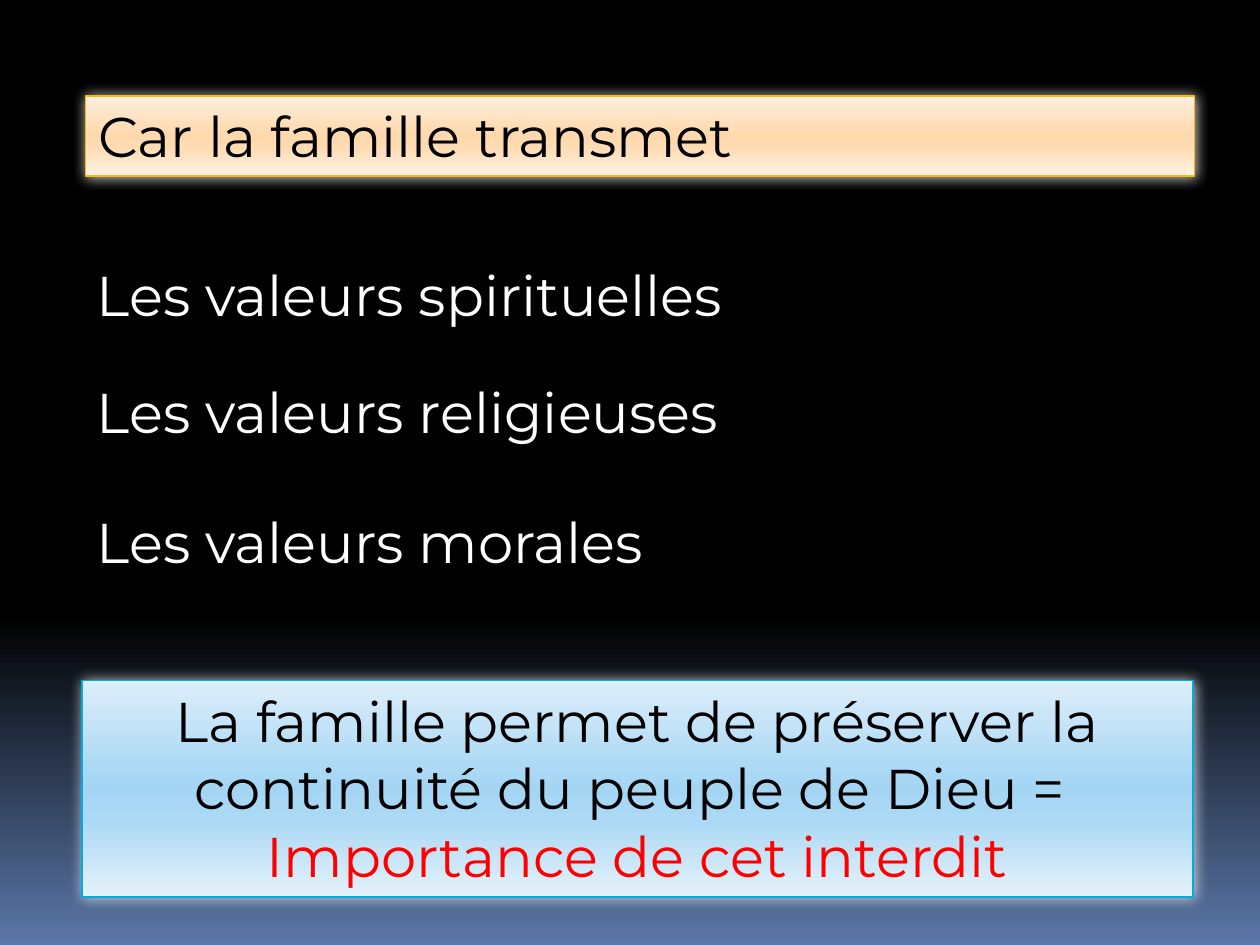
import pptx
import pptx.util
import pptx.dml.color
import pptx.enum.shapes
import pptx.enum.text
import pptx.oxml
import pptx.oxml.ns
import lxml.etree

Inches = pptx.util.Inches
Align = pptx.enum.text.PP_ALIGN
qn = pptx.oxml.ns.qn


def color(value):
    return pptx.dml.color.RGBColor.from_string(value)


def set_gradient(fill, owner, stops):
    fill.gradient()
    fill.gradient_angle = 270
    stop_list = owner.xpath(".//a:gsLst")[0]
    for old in list(stop_list):
        stop_list.remove(old)
    for percent, value in stops:
        stop = lxml.etree.SubElement(stop_list, qn("a:gs"), pos=str(percent * 1000))
        lxml.etree.SubElement(stop, qn("a:srgbClr"), val=value)


deck = pptx.Presentation()
deck.slide_width, deck.slide_height = Inches(10), Inches(7.5)
page = deck.slides.add_slide(deck.slide_layouts[6])
set_gradient(page.background.fill, page.element,
             [(0, "000000"), (65, "000000"), (100, "5B77A8")])

halo = (
    f'<a:effectLst {pptx.oxml.ns.nsdecls("a")}>'
    '<a:outerShdw blurRad="95000" dist="0" algn="ctr" rotWithShape="0">'
    '<a:srgbClr val="FFFFFF"><a:alpha val="75000"/></a:srgbClr>'
    '</a:outerShdw></a:effectLst>'
)
orange = {"line": "FEB80A", "stops": ["FFF0E1", "FFDCB4", "FFD9AD", "FFDCB4", "FFF3E7"]}
blue = {"line": "00ADDC", "stops": ["DEEEFA", "ACD9F5", "A4D6F4", "ACD9F5", "E5F2FB"]}
positions = [0, 40, 50, 65, 100]

items = [
    ((0.68, 0.76, 8.8, 0.64), orange, Align.JUSTIFY,
     [("Car la famille transmet", "000000")]),
    ((0.67, 2.02, 8.82, 0.64), None, Align.JUSTIFY,
     [("Les valeurs spirituelles", "FFFFFF")]),
    ((0.67, 2.95, 8.82, 0.64), None, Align.JUSTIFY,
     [("Les valeurs religieuses", "FFFFFF")]),
    ((0.67, 3.98, 8.82, 0.64), None, Align.JUSTIFY,
     [("Les valeurs morales", "FFFFFF")]),
    ((0.65, 5.4, 8.82, 1.72), blue, Align.CENTER,
     [("La famille permet de préserver la continuité du peuple de Dieu = ", "000000"),
      ("Importance de cet interdit", "FF0000")]),
]
frame_format = {
    "word_wrap": True,
    "auto_size": pptx.enum.text.MSO_AUTO_SIZE.SHAPE_TO_FIT_TEXT,
    "vertical_anchor": pptx.enum.text.MSO_ANCHOR.TOP,
}
font_format = {"name": "Montserrat", "size": pptx.util.Pt(32)}

for place, style, alignment, lines in items:
    place = [Inches(length) for length in place]
    if style:
        box = page.shapes.add_shape(pptx.enum.shapes.MSO_SHAPE.RECTANGLE, *place)
        set_gradient(box.fill, box.element, zip(positions, style["stops"]))
        box.line.color.rgb = color(style["line"])
        box.line.width = pptx.util.Pt(0.94)
        box.element.spPr.append(pptx.oxml.parse_xml(halo))
    else:
        box = page.shapes.add_textbox(*place)
    frame = box.text_frame
    for name, value in frame_format.items():
        setattr(frame, name, value)
    for index, (words, ink) in enumerate(lines):
        para = frame.add_paragraph() if index else frame.paragraphs[0]
        para.alignment = alignment
        span = para.add_run()
        span.text = words
        span.font.color.rgb = color(ink)
        for name, value in font_format.items():
            setattr(span.font, name, value)

deck.save("out.pptx")
